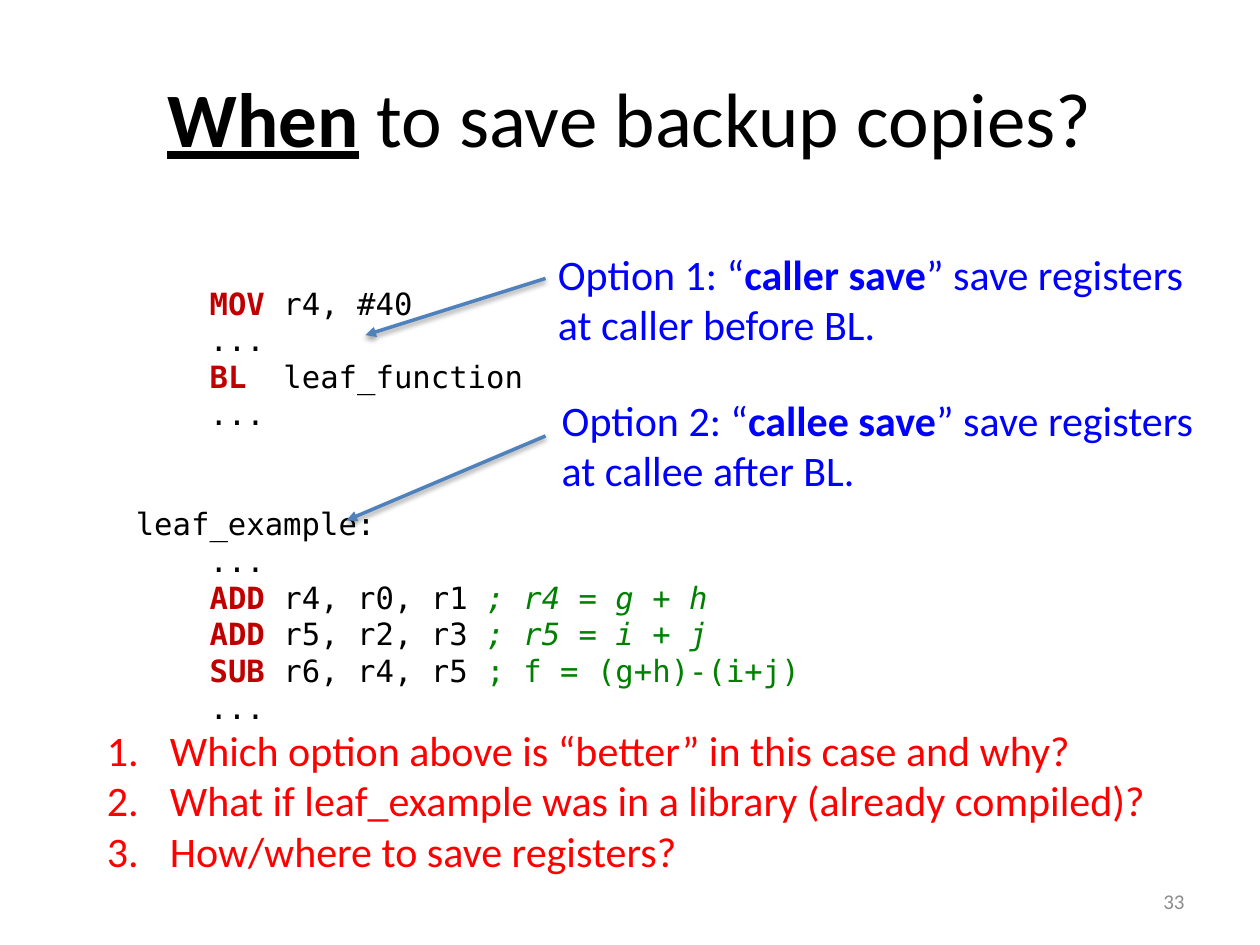
import pptx
import pptx.util
import pptx.dml.color
import pptx.enum.shapes
import pptx.enum.text
import pptx.oxml
import pptx.oxml.ns

Inches = pptx.util.Inches
Pt = pptx.util.Pt
Align = pptx.enum.text.PP_ALIGN
Anchor = pptx.enum.text.MSO_ANCHOR

SANS = "Calibri"
MONO = "DejaVu Sans Mono"
BLACK = "000000"
BLUE = "0000FF"
RED = "FF0000"
GRAY = "8C8C8C"
STEEL = "4F81BD"
BOLD = {"bold": True}
TITLE = {"bold": True, "underline": True}
OPCODE = {"bold": True, "color": "C00000"}
NOTE = {"color": "008000"}
SLANT = {"color": "008000", "italic": True}

CALLER = [
    [("    ",), ("MOV ", OPCODE), ("r4, #40",)],
    [("    ...",)],
    [("    ",), ("BL  ", OPCODE), ("leaf_function",)],
    [("    ...",)],
]
CALLEE = [
    [("leaf_example:",)],
    [("    ...",)],
    [("    ",), ("ADD ", OPCODE), ("r4, r0, r1 ",), ("; r4 = g + h", SLANT)],
    [("    ",), ("ADD ", OPCODE), ("r5, r2, r3 ",), ("; r5 = i + j", SLANT)],
    [("    ",), ("SUB ", OPCODE), ("r6, r4, r5 ",), ("; f = (g+h)-(i+j)", NOTE)],
    [("    ...",)],
]
ASKS = [
    [("Which option above is “better” in this case and why?",)],
    [("What if leaf_example was in a library (already compiled)?",)],
    [("How/where to save registers?",)],
]


def paint(color):
    return pptx.dml.color.RGBColor.from_string(color)


def add_xml(parent, body):
    head, rest = body.split(" ", 1)
    space = pptx.oxml.ns.nsdecls("a")
    parent.append(pptx.oxml.parse_xml(f"{head} {space} {rest}"))


def add_run(para, text, style=None):
    run = para.add_run()
    run.text = text
    for key, value in (style or {}).items():
        if key == "color":
            run.font.color.rgb = paint(value)
        else:
            setattr(run.font, key, value)


def add_text(slide, place, lines, size, color=BLACK, face=SANS,
             align=Align.LEFT, anchor=Anchor.TOP, number=False):
    box = slide.shapes.add_textbox(*map(Inches, place))
    frame = box.text_frame
    frame.word_wrap = True
    frame.vertical_anchor = anchor
    for index, line in enumerate(lines):
        para = frame.add_paragraph() if index else frame.paragraphs[0]
        para.alignment = align
        if number:
            props = para._p.get_or_add_pPr()
            props.set("marL", str(Inches(0.5)))
            props.set("indent", str(Inches(-0.5)))
            add_xml(props, '<a:buFont typeface="+mj-lt"/>')
            add_xml(props, '<a:buAutoNum type="arabicPeriod"/>')
        para.font.name = face
        para.font.size = Pt(size)
        para.font.color.rgb = paint(color)
        for part in line:
            add_run(para, *part)
    return frame


def add_arrow(slide, start, end):
    kind = pptx.enum.shapes.MSO_CONNECTOR.STRAIGHT
    arrow = slide.shapes.add_connector(kind, *map(Inches, start + end))
    arrow.line.color.rgb = paint(STEEL)
    arrow.line.width = Pt(2)
    add_xml(arrow.line._get_or_add_ln(), '<a:tailEnd type="triangle"/>')
    add_xml(arrow._element.spPr, (
        f'<a:effectLst ><a:outerShdw blurRad="{Pt(3.1)}" dist="{Pt(1.6)}" '
        'dir="5400000" rotWithShape="0"><a:srgbClr val="000000">'
        '<a:alpha val="38000"/></a:srgbClr></a:outerShdw></a:effectLst>'))


def add_option(slide, place, label, name, rest):
    line = [(f"{label}: “",), (name, BOLD), (f"” {rest}",)]
    add_text(slide, place, [line], 24, BLUE)


def main():
    deck = pptx.Presentation()
    deck.slide_width = Inches(10)
    deck.slide_height = Inches(7.5)
    slide = deck.slides.add_slide(deck.slide_layouts[6])

    title = [("When", TITLE), (" to save backup copies?",)]
    add_text(slide, (0.5, 0.3, 9, 1.25), [title], 44,
             align=Align.CENTER, anchor=Anchor.MIDDLE)

    code = add_text(slide, (0.98, 2.21, 8.5, 3.21), CALLER + CALLEE, 17.5, face=MONO)
    code.paragraphs[len(CALLER)].space_before = Pt(42)

    add_arrow(slide, (4.33, 2.21), (2.9, 2.66))
    add_option(slide, (4.33, 1.92, 5.42, 0.91), "Option 1", "caller save",
               "save registers at caller before BL.")
    add_arrow(slide, (4.33, 3.46), (2.75, 4.13))
    add_option(slide, (4.36, 3.08, 5.39, 0.91), "Option 2", "callee save",
               "save registers at callee after BL.")

    add_text(slide, (0.75, 5.7, 8.61, 1.31), ASKS, 24, RED, number=True)
    add_text(slide, (7.17, 6.95, 2.33, 0.4), [[("33",)]], 12, GRAY,
             align=Align.RIGHT, anchor=Anchor.MIDDLE)
    deck.save("out.pptx")


if __name__ == "__main__":
    main()
